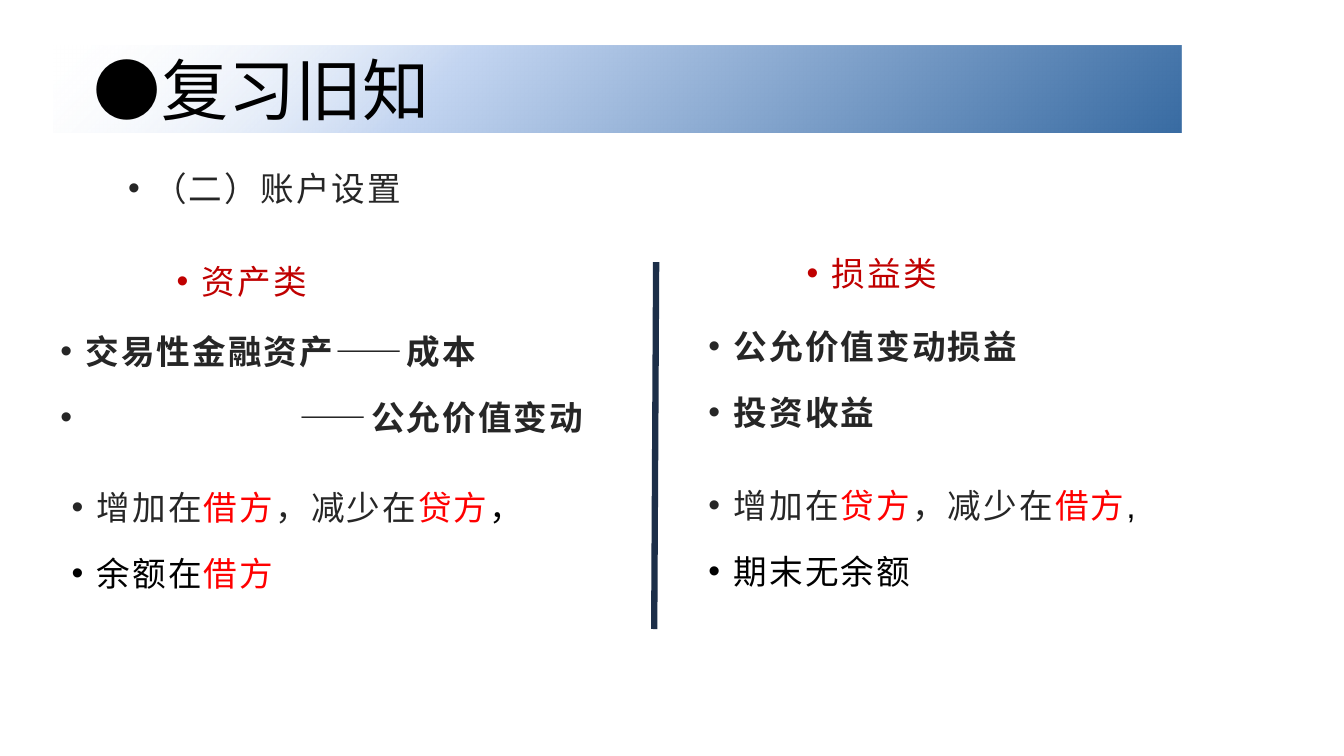
from pptx import Presentation
from pptx.dml.color import RGBColor
from pptx.enum.shapes import MSO_CONNECTOR
from pptx.enum.text import MSO_ANCHOR, MSO_AUTO_SIZE, PP_ALIGN
from pptx.oxml import parse_xml
from pptx.oxml.ns import nsdecls
from pptx.util import Pt

COLORS = {
    "text": "262626", "black": "000000", "red": "FF0000", "heading": "C00000",
    "divider": "1C2E48", "blue": "386BA2", "pale": "C3D5F1", "white": "FFFFFF",
}


def place(shape, left, top, width, height):
    shape.left, shape.top = Pt(left), Pt(top)
    shape.width, shape.height = Pt(width), Pt(height)


def write_list(shape, items, margins, bold=False):
    """Write bulleted items, each a pair of hanging indent and (text, color) runs."""
    frame = shape.text_frame
    frame.word_wrap = True
    frame.auto_size = MSO_AUTO_SIZE.NONE
    frame.vertical_anchor = MSO_ANCHOR.TOP
    frame.margin_left, frame.margin_top, frame.margin_right, frame.margin_bottom = map(Pt, margins)
    for number, (hang, runs) in enumerate(items):
        item = frame.add_paragraph() if number else frame.paragraphs[0]
        item.line_spacing = 1.3
        item.space_before, item.space_after = Pt(0), Pt(10)
        properties = item._p.get_or_add_pPr()
        properties.set("marL", str(Pt(hang)))
        properties.set("indent", str(-Pt(hang)))
        properties.append(parse_xml(f'<a:buFont {nsdecls("a")} typeface="Arial"/>'))
        properties.append(parse_xml(f'<a:buChar {nsdecls("a")} char="•"/>'))
        item.font.size, item.font.name, item.font.bold = Pt(24), "Arial", bold
        properties.get_or_add_defRPr().set("spc", "150")
        for text, color in runs:
            run = item.add_run()
            run.text = text
            run.font.color.rgb = RGBColor.from_string(COLORS[color])
            run._r.get_or_add_rPr().set("lang", "zh-CN")
            run._r.get_or_add_rPr().set("spc", "150")


presentation = Presentation()
presentation.slide_width, presentation.slide_height = Pt(960), Pt(540)
slide = presentation.slides.add_slide(presentation.slide_layouts[3])
title, section, debit_rules = slide.placeholders

# Title banner
place(title, 38, 32.5, 806, 62)
title.text_frame.text = "●复习旧知"
title.text_frame.auto_size = MSO_AUTO_SIZE.NONE
title.text_frame.vertical_anchor = MSO_ANCHOR.MIDDLE
title.text_frame.margin_left = Pt(29)
heading = title.text_frame.paragraphs[0]
heading.alignment = PP_ALIGN.LEFT
heading.font.size, heading.font.name = Pt(48), "Noto Sans CJK SC"
heading.font.color.rgb = RGBColor.from_string(COLORS["black"])
title._element.spPr.append(parse_xml(
    f'<a:gradFill {nsdecls("a")} rotWithShape="1"><a:gsLst>'
    f'<a:gs pos="0"><a:srgbClr val="{COLORS["blue"]}"/></a:gs>'
    f'<a:gs pos="65000"><a:srgbClr val="{COLORS["pale"]}"/></a:gs>'
    f'<a:gs pos="100000"><a:srgbClr val="{COLORS["white"]}"><a:alpha val="0"/></a:srgbClr></a:gs>'
    '</a:gsLst><a:path path="circle"><a:fillToRect l="100000" t="100000"/></a:path></a:gradFill>'
))

# Section line and rules for asset accounts
HANG = 18
PLACEHOLDER_MARGINS = (8, 0, 6.5, 0)
place(section, 83.5, 111, 485, 42.5)
write_list(section, [(HANG, [("（二）账户设置", "text")])], PLACEHOLDER_MARGINS)
place(debit_rules, 43.2, 339, 324, 165.5)
write_list(debit_rules, [
    (HANG, [("增加在", "text"), ("借方", "red"), ("，减少在", "text"), ("贷方", "red"), ("，", "black")]),
    (HANG, [("余额在", "black"), ("借方", "red")]),
], PLACEHOLDER_MARGINS)

# Category headings, account names and rules for profit and loss accounts
for box, bold, items in [
    ((119, 174, 183.5, 45.5), False, [(HANG, [("资产类", "heading")])]),
    ((569, 168.5, 192, 45.5), False, [(HANG, [("损益类", "heading")])]),
    ((36, 224, 431, 93), True, [
        (HANG, [("交易性金融资产——成本", "text")]),
        (171, [("——公允价值变动", "text")]),
    ]),
    ((499, 220.5, 460, 93), True, [
        (HANG, [("公允价值变动损益", "text")]),
        (HANG, [("投资收益", "text")]),
    ]),
    ((499, 334, 460, 93), False, [
        (HANG, [("增加在", "text"), ("贷方", "red"), ("，减少在", "text"), ("借方", "red"), (",", "black")]),
        (HANG, [("期末无余额", "black")]),
    ]),
]:
    write_list(slide.shapes.add_textbox(*map(Pt, box)), items, (7.2, 3.6, 7.2, 3.6), bold)

divider = slide.shapes.add_connector(MSO_CONNECTOR.STRAIGHT, Pt(468.7), Pt(187.2), Pt(467.3), Pt(449.3))
divider.line.width = Pt(4.5)
divider.line.color.rgb = RGBColor.from_string(COLORS["divider"])
divider._element.spPr.append(parse_xml(f'<a:effectLst {nsdecls("a")}/>'))

presentation.save("out.pptx")
